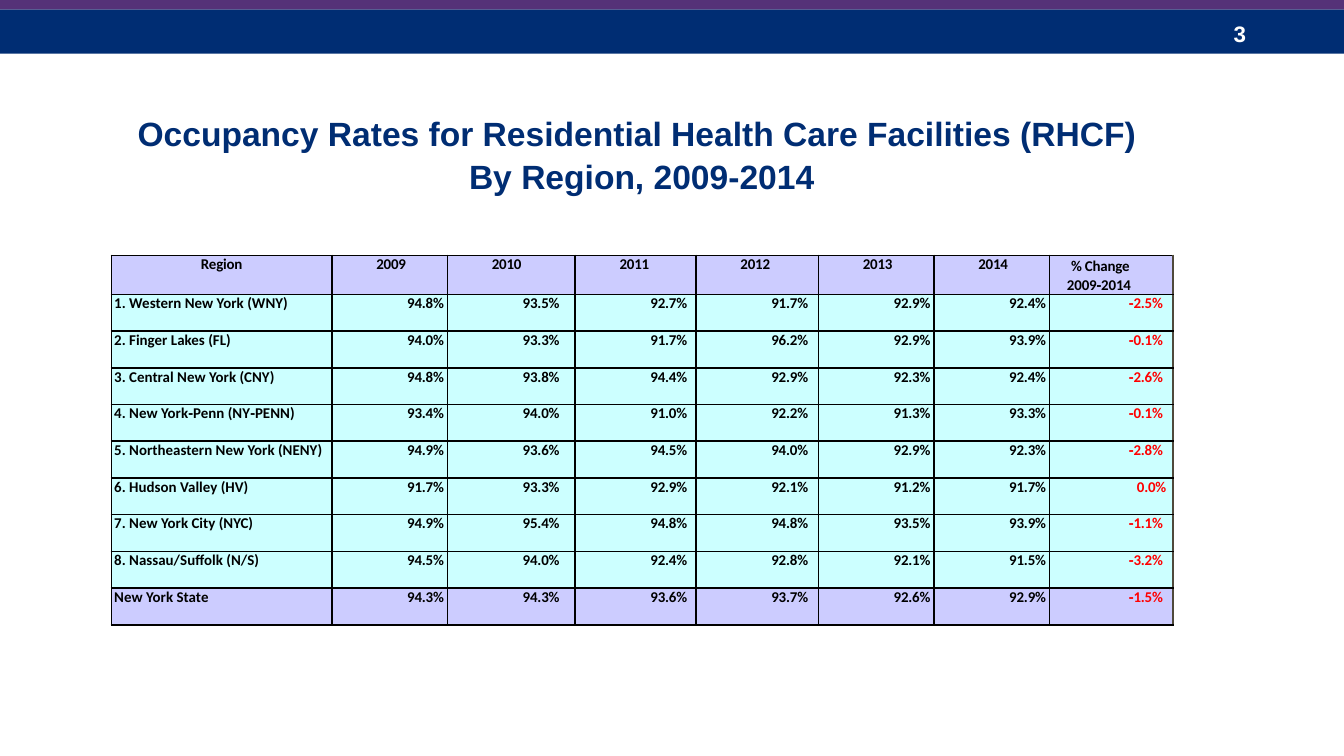
"""Build the slide of nursing facility occupancy rates by region."""
from lxml import etree
from pptx import Presentation
from pptx.dml.color import RGBColor
from pptx.enum.shapes import MSO_SHAPE
from pptx.enum.text import MSO_ANCHOR, PP_ALIGN
from pptx.oxml.ns import qn
from pptx.util import Inches, Pt

RECT = MSO_SHAPE.RECTANGLE
MIDDLE = MSO_ANCHOR.MIDDLE
CENTER = PP_ALIGN.CENTER
NAVY = RGBColor(0x00, 0x2D, 0x73)
PURPLE = RGBColor(0x55, 0x32, 0x78)
WHITE = RGBColor(0xFF, 0xFF, 0xFF)
BLACK = RGBColor(0x00, 0x00, 0x00)
RED = RGBColor(0xFF, 0x00, 0x00)
LAVENDER = RGBColor(0xCC, 0xCC, 0xFF)
AQUA = RGBColor(0xCC, 0xFF, 0xFF)
BROWN = RGBColor(0x4F, 0x49, 0x3B)

SIDES = ("left", "top", "right", "bottom")
COL_WIDTHS = [1.64, 0.86, 0.95, 0.9, 0.91, 0.86, 0.86, 0.92]
TABLE_HEIGHT, HEADER_HEIGHT = 2.75, 0.29
ROWS = [
    ["Region", "2009", "2010", "2011", "2012", "2013", "2014", "% Change 2009‐2014"],
    ["1. Western New York (WNY)", "94.8%", "93.5%", "92.7%", "91.7%", "92.9%", "92.4%", "‐2.5%"],
    ["2. Finger Lakes (FL)", "94.0%", "93.3%", "91.7%", "96.2%", "92.9%", "93.9%", "‐0.1%"],
    ["3. Central New York (CNY)", "94.8%", "93.8%", "94.4%", "92.9%", "92.3%", "92.4%", "‐2.6%"],
    ["4. New York‐Penn (NY‐PENN)", "93.4%", "94.0%", "91.0%", "92.2%", "91.3%", "93.3%", "‐0.1%"],
    ["5. Northeastern New York (NENY)", "94.9%", "93.6%", "94.5%", "94.0%", "92.9%", "92.3%", "‐2.8%"],
    ["6. Hudson Valley (HV)", "91.7%", "93.3%", "92.9%", "92.1%", "91.2%", "91.7%", "0.0%"],
    ["7. New York City (NYC)", "94.9%", "95.4%", "94.8%", "94.8%", "93.5%", "93.9%", "‐1.1%"],
    ["8. Nassau/Suffolk (N/S)", "94.5%", "94.0%", "92.4%", "92.8%", "92.1%", "91.5%", "‐3.2%"],
    ["New York State", "94.3%", "94.3%", "93.6%", "93.7%", "92.6%", "92.9%", "‐1.5%"],
]


def add_run(p, text, size, color, name="Arial"):
    r = p.add_run()
    r.text = text
    for key, value in {"name": name, "size": Pt(size), "bold": True}.items():
        setattr(r.font, key, value)
    r.font.color.rgb = color
    return r


def add_border(cell, side, color):
    ln = etree.SubElement(cell._tc.get_or_add_tcPr(), qn(f"a:{side}"), w=str(Pt(1)))
    fill = etree.SubElement(ln, qn("a:solidFill"))
    etree.SubElement(fill, qn("a:srgbClr"), val=str(color))


prs = Presentation()
prs.slide_width, prs.slide_height = Inches(10), Inches(10 * 9 / 16)
s = prs.slides.add_slide(prs.slide_layouts[6])

for top, height, color in [(0.07, 0.33, NAVY), (-0.02, 0.09, PURPLE)]:
    sp = s.shapes.add_shape(RECT, 0, Inches(top), Inches(10), Inches(height))
    sp.shadow.inherit = False
    sp.fill.solid()
    sp.fill.fore_color.rgb = color
    sp.line.fill.background()

tf = s.shapes.add_textbox(Inches(9.08), Inches(0.1), Inches(0.75), Inches(0.3)).text_frame
tf.word_wrap = True
tf.vertical_anchor = MIDDLE
add_run(tf.paragraphs[0], "3", 12, WHITE)

tf = s.shapes.add_textbox(Inches(0.83), Inches(0.82), Inches(7.89), Inches(0.67)).text_frame
tf.word_wrap = True
for side in SIDES:
    setattr(tf, f"margin_{side}", 0)
title = ["Occupancy Rates for Residential Health Care Facilities (RHCF) ", "By Region, 2009‐2014"]
for i, line in enumerate(title):
    p = tf.add_paragraph() if i else tf.paragraphs[0]
    p.alignment = CENTER
    p.line_spacing = 1.07
    add_run(p, line, 18, NAVY)

table = s.shapes.add_table(
    len(ROWS), len(COL_WIDTHS), Inches(0.83), Inches(1.9), Inches(sum(COL_WIDTHS)), Inches(TABLE_HEIGHT)
).table
table.first_row = table.horz_banding = False
for col, width in zip(table.columns, COL_WIDTHS):
    col.width = Inches(width)
last_row, last_col = len(ROWS) - 1, len(COL_WIDTHS) - 1
for i, row in enumerate(ROWS):
    table.rows[i].height = Inches((TABLE_HEIGHT - HEADER_HEIGHT) / last_row if i else HEADER_HEIGHT)
    for j, text in enumerate(row):
        cell = table.cell(i, j)
        for side in SIDES:
            setattr(cell, f"margin_{side}", 0)
        for side in ("lnL", "lnR", "lnT", "lnB"):
            add_border(cell, side, BROWN if side == "lnR" and j == last_col else BLACK)
        cell.fill.solid()
        cell.fill.fore_color.rgb = LAVENDER if i in (0, last_row) else AQUA

        p = cell.text_frame.paragraphs[0]
        indent, first, right = 0.56 if i else 0.33, 0, 0
        if j == 0:
            indent = 0.02 if i else 0
            p.alignment = None if i else CENTER
        elif j == last_col:
            indent = 0.59 if text.startswith("‐") else 0.65
            if i == 0:
                indent, first, right = 0.13, 0.03, 0.13
                p.line_spacing = 1.08
        pPr = p._p.get_or_add_pPr()
        for key, value in {"marL": indent, "marR": right, "indent": first}.items():
            pPr.set(key, str(Inches(value)))
        r = add_run(p, text, 8, RED if i and j == last_col else BLACK, "Calibri")
        r._r.get_or_add_rPr().set("spc", "0" if i and j == 0 else "-10")

prs.save("out.pptx")
